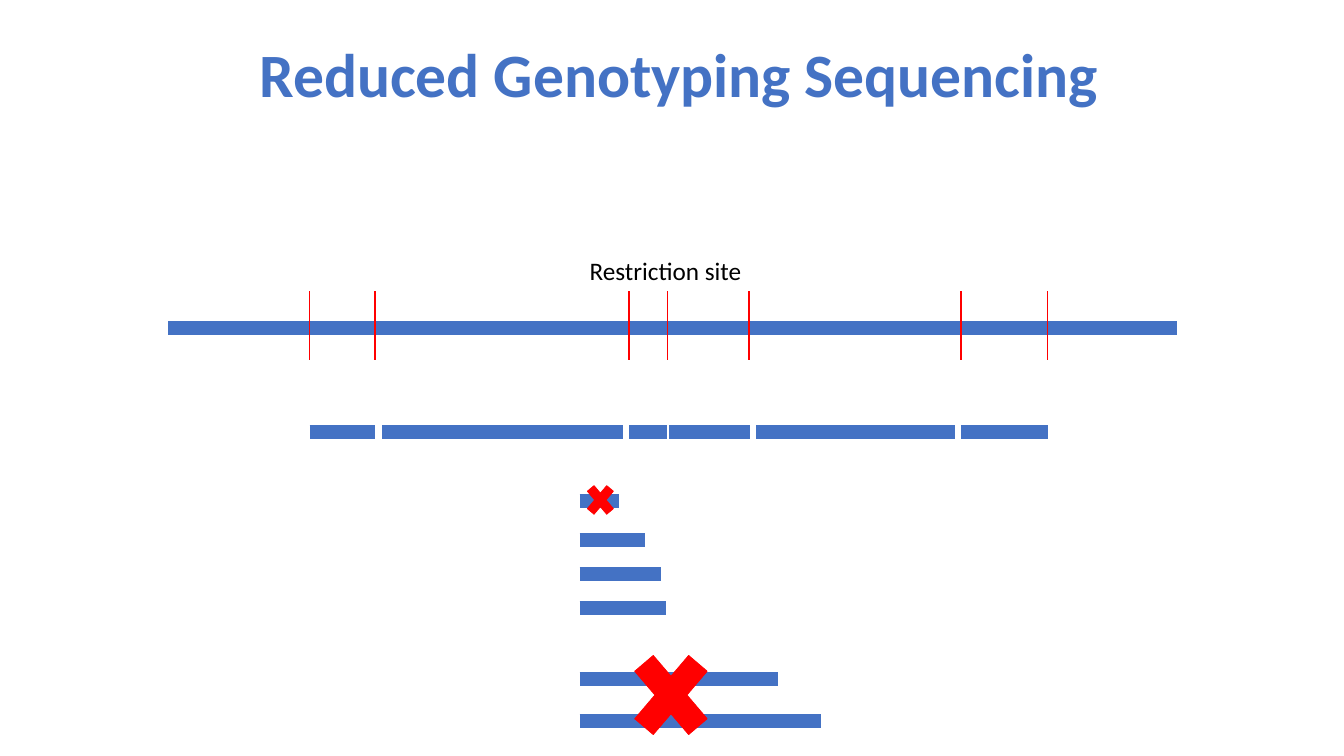
"""Build the slide on reduced genotyping sequencing with restriction sites."""
from dataclasses import dataclass

from lxml import etree
from pptx import Presentation
from pptx.dml.color import RGBColor
from pptx.enum.shapes import MSO_CONNECTOR, MSO_SHAPE
from pptx.enum.text import MSO_ANCHOR, MSO_AUTO_SIZE, PP_ALIGN
from pptx.oxml.ns import qn
from pptx.slide import Slide
from pptx.text.text import TextFrame
from pptx.util import Emu, Pt

STRAIGHT = MSO_CONNECTOR.STRAIGHT
CROSS = MSO_SHAPE.MATH_MULTIPLY
MIDDLE = MSO_ANCHOR.MIDDLE
CENTER = PP_ALIGN.CENTER
FIT_SHAPE = MSO_AUTO_SIZE.SHAPE_TO_FIT_TEXT

EMU_PER_PX = 9144
FONT = "Calibri"
COLOURS = {"dna": "4472C4", "cut": "FF0000", "text": "000000"}


@dataclass(frozen=True)
class Segment:
    left: int
    right: int
    y: int


@dataclass(frozen=True)
class Box:
    left: int
    top: int
    width: int
    height: int


TITLE_BOX = Box(99, 4, 1150, 145)
LABEL_BOX = Box(575, 248, 172, 40)
GENOME = Segment(167, 1167, 325)
SITE_TOP, SITE_BOTTOM = 289, 357
SITES = [307, 372, 624, 662, 743, 953, 1039]
FRAGMENT_Y = 429
FRAGMENTS = [
    Segment(left, right, FRAGMENT_Y)
    for left, right in [(307, 372), (379, 618), (624, 662),
                        (664, 744), (750, 947), (953, 1039)]
]
SORTED_LEFT = 575
SORTED_FRAGMENTS = [
    Segment(SORTED_LEFT, SORTED_LEFT + length, y)
    for length, y in [(39, 497), (65, 536), (81, 569),
                      (86, 603), (197, 674), (239, 715)]
]
REJECTED = [Box(614, 629, 103, 121), Box(577, 474, 37, 44)]


def px(value: int) -> Emu:
    """Turn px into EMU."""
    return Emu(value * EMU_PER_PX)


def colour(name: str) -> RGBColor:
    """Look up a named colour."""
    return RGBColor.from_string(COLOURS[name])


def place(box: Box) -> tuple[Emu, Emu, Emu, Emu]:
    """Give the position and size of a box in EMU."""
    return px(box.left), px(box.top), px(box.width), px(box.height)


def add_line(page: Slide, start: tuple[int, int], end: tuple[int, int],
             colour_name: str, points: float) -> None:
    """Draw a straight line without a shadow."""
    line = page.shapes.add_connector(STRAIGHT, *map(px, start + end))
    line.line.color.rgb = colour(colour_name)
    line.line.width = Pt(points)
    etree.SubElement(line._element.spPr, qn("a:effectLst"))


def add_segment(page: Slide, segment: Segment) -> None:
    """Draw a stretch of DNA as a thick line."""
    add_line(page, (segment.left, segment.y), (segment.right, segment.y), "dna", 10)


def add_cross(page: Slide, box: Box) -> None:
    """Draw a cross over rejected fragments."""
    cross = page.shapes.add_shape(CROSS, *place(box))
    cross.shadow.inherit = False
    cross.fill.solid()
    cross.fill.fore_color.rgb = colour("cut")
    cross.line.color.rgb = colour("cut")
    cross.line.width = Pt(0.5)


def add_text(page: Slide, box: Box, text: str, size: int,
             colour_name: str, bold: bool = False) -> TextFrame:
    """Add a one-line text box and return its frame."""
    frame = page.shapes.add_textbox(*place(box)).text_frame
    frame.text = text
    font = frame.paragraphs[0].runs[0].font
    font.name = FONT
    font.size = Pt(size)
    font.bold = bold
    font.color.rgb = colour(colour_name)
    return frame


def main() -> None:
    """Build and save the deck."""
    deck = Presentation()
    deck.slide_width, deck.slide_height = px(1333), px(750)
    page = deck.slides.add_slide(deck.slide_layouts[6])

    title = add_text(page, TITLE_BOX, "Reduced Genotyping Sequencing", 44, "dna", True)
    title.word_wrap = True
    title.vertical_anchor = MIDDLE
    title.paragraphs[0].alignment = CENTER
    title.paragraphs[0].line_spacing = 0.9

    add_segment(page, GENOME)
    for x in SITES:
        add_line(page, (x, SITE_TOP), (x, SITE_BOTTOM), "cut", 1)
    for segment in FRAGMENTS + SORTED_FRAGMENTS:
        add_segment(page, segment)

    label = add_text(page, LABEL_BOX, "Restriction site", 18, "text")
    label.word_wrap = False
    label.auto_size = FIT_SHAPE
    for box in REJECTED:
        add_cross(page, box)

    deck.save("out.pptx")


if __name__ == "__main__":
    main()
